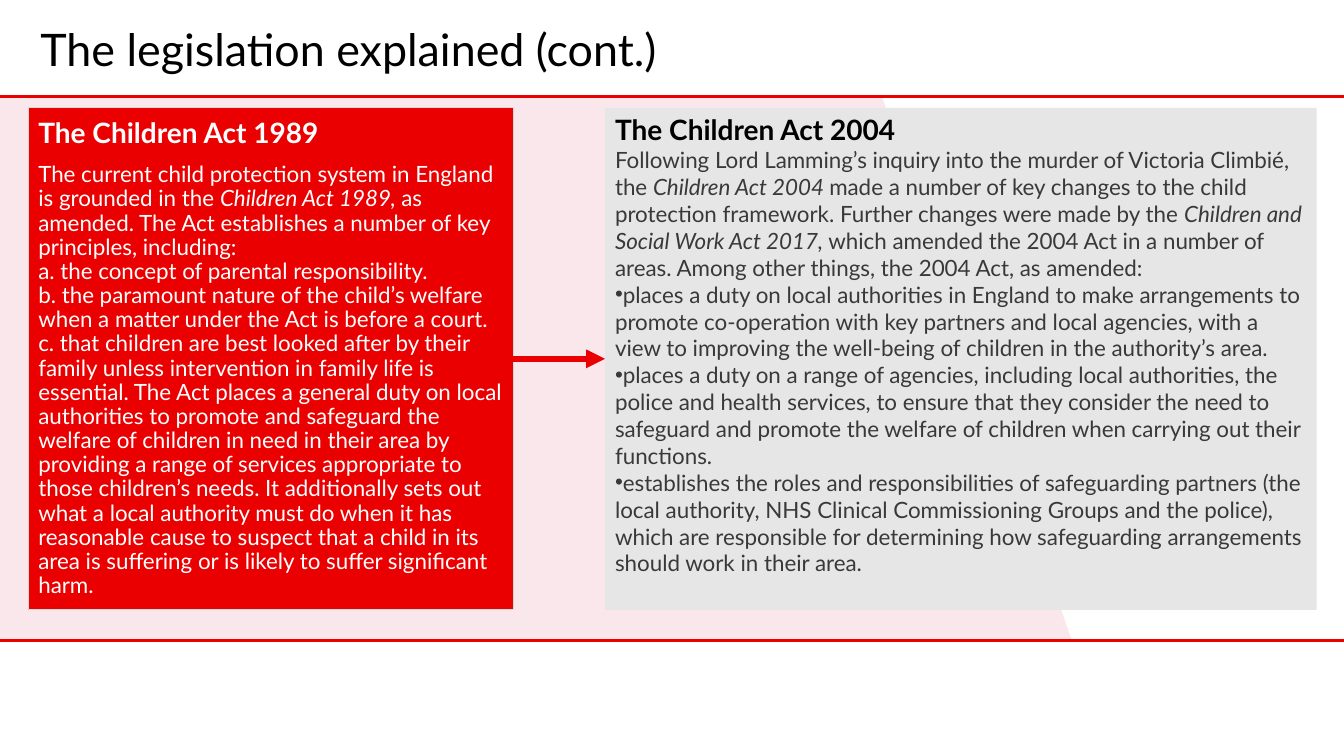
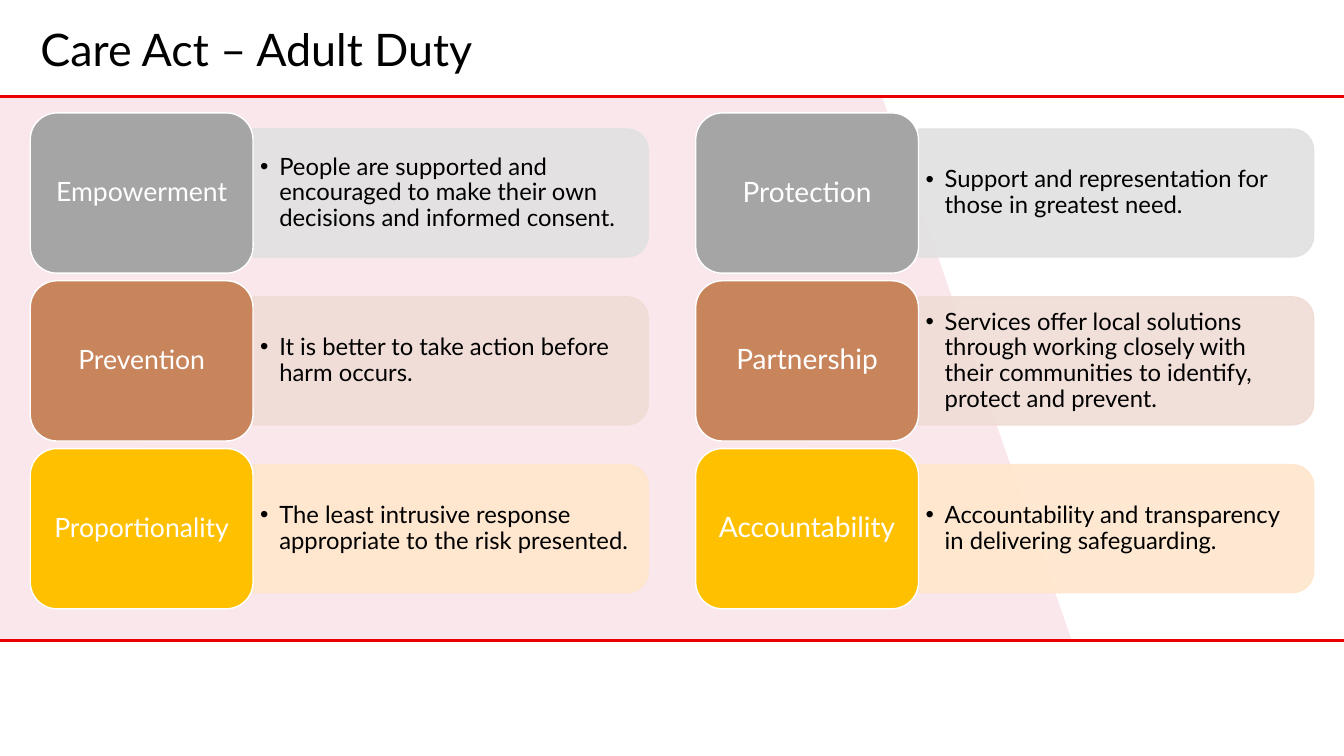
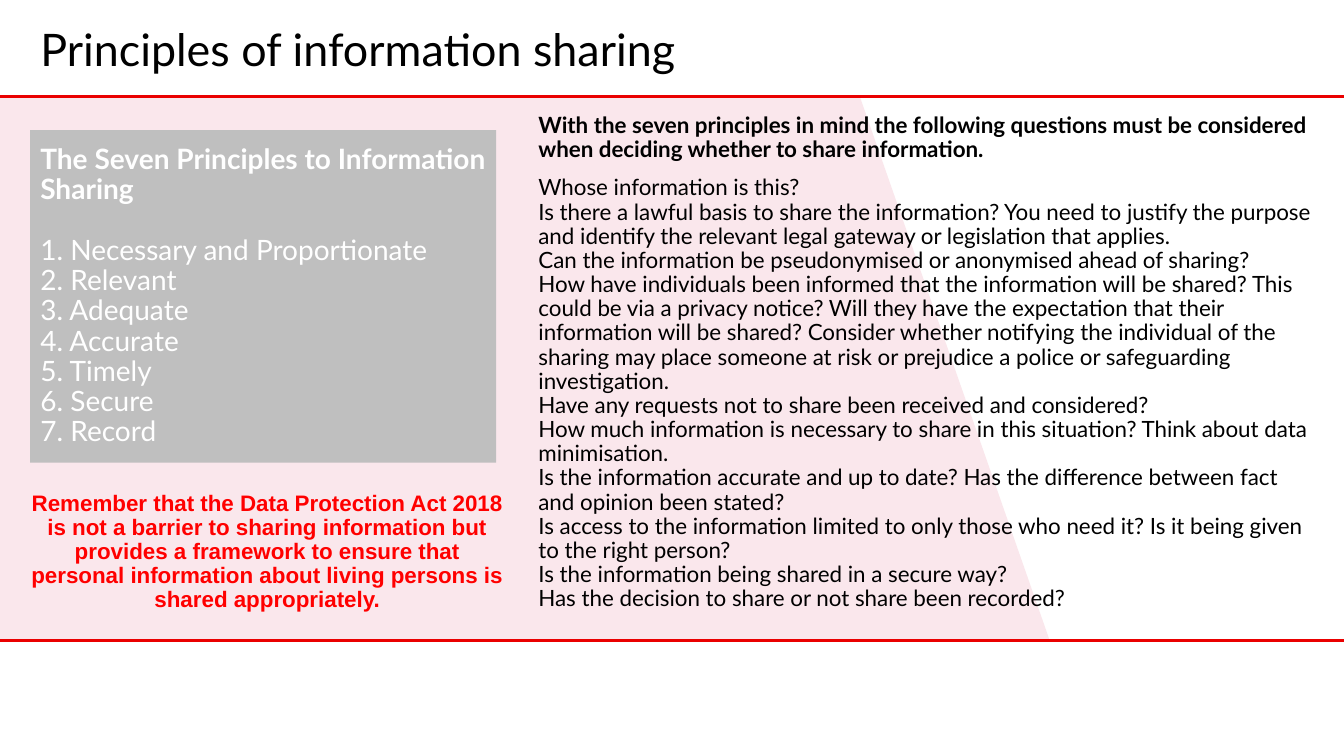
from pptx import Presentation
from pptx.dml.color import RGBColor
from pptx.enum.shapes import MSO_CONNECTOR, MSO_SHAPE
from pptx.enum.text import MSO_ANCHOR, MSO_AUTO_SIZE, PP_ALIGN
from pptx.oxml.ns import qn
from pptx.util import Inches, Pt
from lxml import etree

LEFT, CENTER = PP_ALIGN.LEFT, PP_ALIGN.CENTER
TOP, MIDDLE, BOTTOM = MSO_ANCHOR.TOP, MSO_ANCHOR.MIDDLE, MSO_ANCHOR.BOTTOM
RECTANGLE, ROUNDED = MSO_SHAPE.RECTANGLE, MSO_SHAPE.ROUNDED_RECTANGLE
PARALLELOGRAM = MSO_SHAPE.PARALLELOGRAM
ROUNDED_TOP = MSO_SHAPE.ROUND_2_SAME_RECTANGLE
STRAIGHT = MSO_CONNECTOR.STRAIGHT
TITLE_ONLY, TWO_CONTENT = 5, 3

WIDTH, HEIGHT = 13.33, 7.5
BAND_TOP, BAND_BOTTOM = 0.96, 6.35
RED, PINK, WHITE, BLACK = "EA0000", "FAE7EC", "FFFFFF", "000000"
LIGHT_GREY, MID_GREY, DARK_GREY = "E7E6E6", "BFBFBF", "393939"
FONT = "Lato"

# Label colour and panel tint for each row of principles
ROW_COLORS = [("A5A5A5", "E1E1E1"), ("C8855C", "F0DCD5"), ("FFC000", "FFE6CC")]

ACT_1989 = [
    "The current child protection system in England is grounded in the *Children Act 1989, *as amended. "
    "The Act establishes a number of key principles, including:",
    "a. the concept of parental responsibility.",
    "b. the paramount nature of the child’s welfare when a matter under the Act is before a court.",
    "c. that children are best looked after by their family unless intervention in family life is essential. "
    "The Act places a general duty on local authorities to promote and safeguard the welfare of children in "
    "need in their area by providing a range of services appropriate to those children’s needs. It "
    "additionally sets out what a local authority must do when it has reasonable cause to suspect that a "
    "child in its area is suffering or is likely to suffer significant harm.",
]
ACT_2004 = (
    "Following Lord Lamming’s inquiry into the murder of Victoria Climbié, the *Children Act 2004 *made a "
    "number of key changes to the child protection framework. Further changes were made by the *Children and "
    "Social Work Act 2017, *which amended the 2004 Act in a number of areas. Among other things, the 2004 "
    "Act, as amended:"
)
ACT_2004_DUTIES = [
    "places a duty on local authorities in England to make arrangements to promote co-operation with key "
    "partners and local agencies, with a view to improving the well-being of children in the authority’s area.",
    "places a duty on a range of agencies, including local authorities, the police and health services, to "
    "ensure that they consider the need to safeguard and promote the welfare of children when carrying out "
    "their functions.",
    "establishes the roles and responsibilities of safeguarding partners (the local authority, NHS Clinical "
    "Commissioning Groups and the police), which are responsible for determining how safeguarding "
    "arrangements should work in their area.",
]
# Left edge, label size and rows of each column
DUTY_COLUMNS = [
    (0.3, 19, [
        ("Empowerment", "People are supported and encouraged to make their own decisions and informed consent."),
        ("Prevention", "It is better to take action before harm occurs."),
        ("Proportionality", "The least intrusive response appropriate to the risk presented."),
    ]),
    (6.9, 20, [
        ("Protection", "Support and representation for those in greatest need."),
        ("Partnership", "Services offer local solutions through working closely with their communities to "
                        "identify, protect and prevent."),
        ("Accountability", "Accountability and transparency in delivering safeguarding."),
    ]),
]
SHARING_PRINCIPLES = ["Necessary and Proportionate", "Relevant", "Adequate", "Accurate", "Timely", "Secure", "Record"]
SHARING_QUESTIONS = [
    "Whose information is this?",
    "Is there a lawful basis to share the information? You need to justify the purpose and identify the "
    "relevant legal gateway or legislation that applies.",
    "Can the information be pseudonymised or anonymised ahead of sharing?",
    "How have individuals been informed that the information will be shared? This could be via a privacy "
    "notice? Will they have the expectation that their information will be shared? Consider whether "
    "notifying the individual of the sharing may place someone at risk or prejudice a police or "
    "safeguarding investigation.",
    "Have any requests not to share been received and considered?",
    "How much information is necessary to share in this situation? Think about data minimisation.",
    "Is the information accurate and up to date? Has the difference between fact and opinion been stated?",
    "Is access to the information limited to only those who need it? Is it being given to the right person?",
    "Is the information being shared in a secure way?",
    "Has the decision to share or not share been recorded?",
]
REMINDER = (
    "Remember that the Data Protection Act 2018 is not a barrier to sharing information but provides a "
    "framework to ensure that personal information about living persons is shared appropriately."
)


def rgb(color):
    return RGBColor.from_string(color)


def paint(shape, fill=None, line=None, line_width=1, alpha=None):
    """Set fill and outline; alpha is the opacity in percent."""
    for part, color in ((shape.fill, fill), (shape.line.fill, line)):
        if color is None:
            part.background()
            continue
        part.solid()
        part.fore_color.rgb = rgb(color)
    if line:
        shape.line.width = Pt(line_width)
    if alpha:
        for color_element in shape._element.spPr.iter(qn("a:srgbClr")):
            etree.SubElement(color_element, qn("a:alpha"), val=str(alpha * 1000))


def add_box(shapes, kind, box, **look):
    shape = shapes.add_shape(kind, *map(Inches, box))
    shape.shadow.inherit = False
    paint(shape, **look)
    return shape


def add_line(slide, start, end, width, arrow=False):
    line = slide.shapes.add_connector(STRAIGHT, *map(Inches, start + end))
    line.line.color.rgb = rgb(RED)
    line.line.width = Pt(width)
    if arrow:
        etree.SubElement(line.line._get_or_add_ln(), qn("a:tailEnd"), type="triangle")
    etree.SubElement(line._element.spPr, qn("a:effectLst"))
    return line


def place(shape, box):
    shape.left, shape.top, shape.width, shape.height = map(Inches, box)
    return shape


def set_frame(shape, anchor=MIDDLE, margins=(0.1, 0.05)):
    frame = shape.text_frame
    frame.word_wrap = True
    frame.auto_size = MSO_AUTO_SIZE.NONE
    frame.vertical_anchor = anchor
    frame.margin_left = frame.margin_right = Inches(margins[0])
    frame.margin_top = frame.margin_bottom = Inches(margins[1])
    return frame


def add_text(frame, text, size=16, color=BLACK, bold=False, font=FONT, align=LEFT,
             spacing=0.9, before=0, bullet=False, indent=0):
    """Add one paragraph; parts between asterisks are italic."""
    paragraph = frame.paragraphs[0]
    if paragraph.runs:
        paragraph = frame.add_paragraph()
    paragraph.alignment = align
    paragraph.line_spacing = spacing
    paragraph.space_before = Pt(before)
    paragraph.space_after = Pt(0)
    properties = paragraph._p.get_or_add_pPr()
    properties.set("marL", str(Inches(indent)))
    properties.set("indent", str(-Inches(indent)))
    if bullet:
        etree.SubElement(properties, qn("a:buFont"), typeface="Arial")
        etree.SubElement(properties, qn("a:buChar"), char="•")
    else:
        etree.SubElement(properties, qn("a:buNone"))
    for number, part in enumerate(text.split("*")):
        run = paragraph.add_run()
        run.text = part
        run.font.name = font
        run.font.size = Pt(size)
        run.font.bold = bold
        run.font.italic = number % 2 == 1
        run.font.color.rgb = rgb(color)


def add_base(presentation, layout, title, slant_left=2.16):
    """Add a slide with the shared tinted band, red rules and title."""
    slide = presentation.slides.add_slide(presentation.slide_layouts[layout])
    band_height = BAND_BOTTOM - BAND_TOP
    slant = add_box(slide.shapes, PARALLELOGRAM, (slant_left, BAND_TOP, 8.47, band_height), fill=PINK)
    slant.adjustments[0] = 0.349
    slant._element.spPr.xfrm.set("flipH", "1")
    block = add_box(slide.shapes, RECTANGLE, (0, BAND_TOP, 5.37, band_height), fill=PINK)
    rules = [add_line(slide, (0, y), (WIDTH, y), 2.25) for y in (BAND_TOP, BAND_BOTTOM)]
    # Keep the shared parts behind the placeholders
    for position, part in enumerate([slant, block] + rules, start=2):
        slide.shapes._spTree.insert(position, part._element)
    heading = place(slide.shapes.title, (0.3, 0.2, 12.76, 0.61))
    add_text(set_frame(heading, BOTTOM), title, size=32)
    return slide


def add_act_1989(panel, box):
    paint(place(panel, box), fill=RED, line="D9D9D9", line_width=0.75)
    frame = set_frame(panel)
    add_text(frame, "The Children Act 1989", size=20, color=WHITE, bold=True, before=10)
    for number, text in enumerate(ACT_1989):
        add_text(frame, text, color=WHITE, before=0 if number else 10)


def add_act_2004(panel, box):
    paint(place(panel, box), fill=LIGHT_GREY)
    frame = set_frame(panel, TOP)
    add_text(frame, "The Children Act 2004", size=20, bold=True, spacing=1)
    add_text(frame, ACT_2004, color=DARK_GREY, spacing=1)
    for duty in ACT_2004_DUTIES:
        add_text(frame, duty, color=DARK_GREY, spacing=1, bullet=True)


def legislation_slide(presentation):
    slide = add_base(presentation, TWO_CONTENT, "The legislation explained (cont.)")
    older, newer = slide.placeholders[1], slide.placeholders[2]
    add_act_1989(older, (0.28, 1.07, 4.81, 4.98))
    add_act_2004(newer, (6, 1.07, 7.06, 4.98))
    arrow = add_line(slide, (5.09, 3.56), (6, 3.56), 4.5, arrow=True)
    arrow.begin_connect(older, 3)
    arrow.end_connect(newer, 1)


def add_duty(shapes, left, top, label, label_size, text, colors):
    """A rounded label with a tinted panel to its right."""
    label_width, label_height = 2.21, 1.59
    length, depth = 3.92, 1.27
    panel_left = left + label_width
    panel_top = top + (label_height - depth) / 2
    # The panel is an upright shape turned a quarter about its centre
    turn = (length - depth) / 2
    panel = add_box(shapes, ROUNDED_TOP, (panel_left + turn, panel_top - turn, depth, length),
                    fill=colors[1], line=colors[1], alpha=90)
    panel.rotation = 90
    description = shapes.add_textbox(*map(Inches, (panel_left, panel_top + 0.06, 3.86, 1.15)))
    add_text(set_frame(description, margins=(0.07, 0.04)), text, size=17, bullet=True, indent=0.19)
    tab = add_box(shapes, ROUNDED, (left, top, label_width, label_height), fill=colors[0], line=WHITE)
    add_text(set_frame(tab, margins=(0.08, 0.04)), label, size=label_size, color=WHITE, align=CENTER)


def duty_slide(presentation):
    slide = add_base(presentation, TITLE_ONLY, "Care Act – Adult Duty")
    for left, label_size, rows in DUTY_COLUMNS:
        group = slide.shapes.add_group_shape()
        for number, ((label, text), colors) in enumerate(zip(rows, ROW_COLORS)):
            add_duty(group.shapes, left, 1.12 + number * 1.665, label, label_size, text, colors)


def add_sharing_principles(panel, box):
    paint(place(panel, box), fill=MID_GREY)
    frame = set_frame(panel)
    add_text(frame, "The Seven Principles to Information Sharing", size=20, color=WHITE, bold=True)
    for number, principle in enumerate(SHARING_PRINCIPLES, start=1):
        add_text(frame, f"{number}. {principle}", size=20, color=WHITE, before=22 if number == 1 else 0)


def add_sharing_questions(panel, box):
    frame = set_frame(place(panel, box))
    add_text(frame, "With the seven principles in mind the following questions must be considered when "
                    "deciding whether to share information.", bold=True, before=10)
    for number, question in enumerate(SHARING_QUESTIONS):
        add_text(frame, question, before=0 if number else 10)


def sharing_slide(presentation):
    slide = add_base(presentation, TWO_CONTENT, "Principles of information sharing", slant_left=1.94)
    add_sharing_principles(slide.placeholders[1], (0.3, 1.29, 4.62, 3.3))
    add_sharing_questions(slide.placeholders[2], (5.24, 1.29, 7.9, 4.62))
    reminder = slide.shapes.add_textbox(*map(Inches, (0.19, 4.75, 4.92, 1.46)))
    add_text(set_frame(reminder), REMINDER, color="FF0000", bold=True, font="Arial", align=CENTER)


def main():
    presentation = Presentation()
    presentation.slide_width = Inches(WIDTH)
    presentation.slide_height = Inches(HEIGHT)
    legislation_slide(presentation)
    duty_slide(presentation)
    sharing_slide(presentation)
    presentation.save("out.pptx")


if __name__ == "__main__":
    main()
